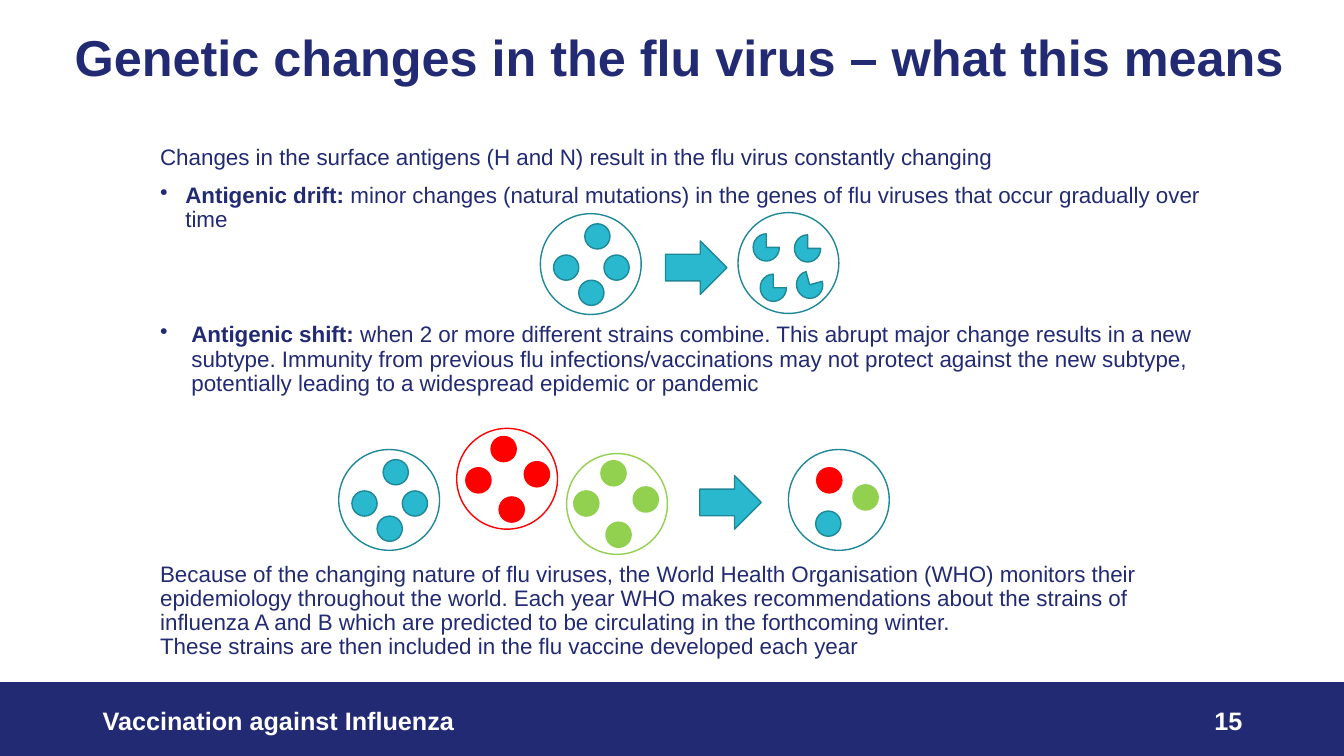
from lxml.etree import SubElement
from pptx import Presentation
from pptx.dml.color import RGBColor
from pptx.enum.shapes import MSO_SHAPE
from pptx.enum.text import MSO_ANCHOR, MSO_AUTO_SIZE, PP_ALIGN
from pptx.oxml.ns import qn
from pptx.util import Inches, Pt

COLORS = {"navy": "212A73", "white": "FFFFFF", "blue": "29B8CE",
          "teal": "1E8898", "red": "FF0000", "green": "92D050"}
# Strain name -> (fill, line)
STRAINS = {"blue": ("blue", "teal"), "red": ("red", "red"), "green": ("green", "green")}

CELL = 1.0
ANTIGEN = (0.25, 0.25)
MUTANT = (0.26, 0.27)
ARROW = (0.61, 0.53)
BLUE_SPOTS = [(0.13, 0.41), (0.38, 0.66), (0.63, 0.41), (0.44, 0.1)]
RED_SPOTS = [(0.09, 0.39), (0.42, 0.68), (0.67, 0.33), (0.34, 0.08)]
GREEN_SPOTS = [(0.07, 0.37), (0.39, 0.68), (0.66, 0.33), (0.34, 0.07)]

# Text runs (text, bold), hanging indent in inches, space before in points
BODY = [
    ([("Changes in the surface antigens (H and N) result in the flu virus "
       "constantly changing", False)], 0, 0),
    ([("Antigenic drift: ", True),
      ("minor changes (natural mutations) in the genes of flu viruses that occur "
       "gradually over time", False)], 0.25, 10),
    ([("Antigenic shift: ", True),
      ("when 2 or more different strains combine. This abrupt major change results "
       "in a new subtype. Immunity from previous flu infections/vaccinations may not "
       "protect against the new subtype, potentially leading to a widespread epidemic "
       "or pandemic", False)], 0.31, 65),
    ([("Because of the changing nature of flu viruses, the World Health Organisation "
       "(WHO) monitors their epidemiology throughout the world. Each year WHO makes "
       "recommendations about the strains of influenza A and B which are predicted to "
       "be circulating in the forthcoming winter. \n"
       "These strains are then included in the flu vaccine developed each year",
       False)], 0, 119),
]


def rgb(name):
    return RGBColor.from_string(COLORS[name])


def format_font(font, size, color, bold=False):
    values = {"name": "Arial", "size": Pt(size), "bold": bold}
    for key, value in values.items():
        setattr(font, key, value)
    font.color.rgb = rgb(color)


def add_runs(p, runs, size, color):
    for text, bold in runs:
        for i, line in enumerate(text.split("\n")):
            if i:
                p.add_line_break()
            r = p.add_run()
            r.text = line
            format_font(r.font, size, color, bold)


def add_bullet(p, indent):
    pPr = p._p.get_or_add_pPr()
    pPr.set("marL", str(Inches(indent)))
    pPr.set("indent", str(-Inches(indent)))
    SubElement(pPr, qn("a:buChar")).set("char", "•")


def add_part(shapes, kind, x, y, w, h, fill, line):
    sp = shapes.add_shape(kind, Inches(x), Inches(y), Inches(w), Inches(h))
    sp.shadow.inherit = False
    if fill:
        sp.fill.solid()
        sp.fill.fore_color.rgb = rgb(fill)
    else:
        sp.fill.background()
    sp.line.color.rgb = rgb(line)
    sp.line.width = Pt(1)
    return sp


def add_cell(s, x, y, outline, antigens):
    """Virus cell; antigens are (dx, dy, strain) from its top left corner."""
    shapes = s.shapes.add_group_shape().shapes
    add_part(shapes, MSO_SHAPE.OVAL, x, y, CELL, CELL, None, outline)
    for dx, dy, strain in antigens:
        add_part(shapes, MSO_SHAPE.FLOWCHART_CONNECTOR, x + dx, y + dy,
                 *ANTIGEN, *STRAINS[strain])


def add_strain(s, x, y, strain, spots):
    add_cell(s, x, y, STRAINS[strain][1], [(dx, dy, strain) for dx, dy in spots])


def add_arrow(s, x, y):
    add_part(s.shapes, MSO_SHAPE.RIGHT_ARROW, x, y, *ARROW, *STRAINS["blue"])


def add_title(s, x, y, w, h):
    sp = s.shapes.title
    sp.left, sp.top, sp.width, sp.height = map(Inches, (x, y, w, h))
    tf = sp.text_frame
    tf.auto_size = MSO_AUTO_SIZE.NONE
    tf.vertical_anchor = MSO_ANCHOR.MIDDLE
    p = tf.paragraphs[0]
    p.alignment = PP_ALIGN.LEFT
    p.line_spacing = 0.9
    add_runs(p, [("Genetic changes in the flu virus – what this means", True)], 36, "navy")


def add_body(s, x, y, w, h):
    tf = s.shapes.add_textbox(*map(Inches, (x, y, w, h))).text_frame
    tf.word_wrap = True
    for i, (runs, indent, before) in enumerate(BODY):
        p = tf.add_paragraph() if i else tf.paragraphs[0]
        if indent:
            add_bullet(p, indent)
        p.line_spacing = 0.9
        if before:
            p.space_before = Pt(before)
        add_runs(p, runs, 16, "navy")


def add_drift(s, x, y):
    add_strain(s, x, y + 0.01, "blue", BLUE_SPOTS)
    add_arrow(s, x + 1.24, y + 0.28)
    # Mutated cell with notched antigens
    x += 1.96
    add_cell(s, x, y, "teal", [])
    for dx, dy, turn in [(0.15, 0.21, 0), (0.22, 0.61, 0),
                         (0.56, 0.22, 0), (0.58, 0.58, -15.2)]:
        sp = add_part(s.shapes, MSO_SHAPE.PIE, x + dx, y + dy, *MUTANT, *STRAINS["blue"])
        sp.rotation = turn


def add_shift(s, x, y):
    add_strain(s, x, y + 0.21, "blue", BLUE_SPOTS)
    add_strain(s, x + 1.17, y, "red", RED_SPOTS)
    add_strain(s, x + 2.26, y + 0.25, "green", GREEN_SPOTS)
    add_arrow(s, x + 3.58, y + 0.47)
    # New subtype mixes all three strains
    add_cell(s, x + 4.46, y + 0.21, "teal",
             [(0.28, 0.18, "red"), (0.27, 0.61, "blue"), (0.64, 0.35, "green")])


def add_footer(s, x, y, w, h):
    add_part(s.shapes, MSO_SHAPE.RECTANGLE, x, y, w, h, "navy", "navy")
    for text, dx, width, align in [("Vaccination against Influenza", 0.92, 8, PP_ALIGN.LEFT),
                                   ("15", 9.42, 3, PP_ALIGN.RIGHT)]:
        box = s.shapes.add_textbox(Inches(x + dx), Inches(y + 0.18), Inches(width), Inches(0.4))
        tf = box.text_frame
        tf.word_wrap = True
        tf.vertical_anchor = MSO_ANCHOR.MIDDLE
        p = tf.paragraphs[0]
        p.alignment = align
        add_runs(p, [(text, True)], 18, "white")


def main():
    prs = Presentation()
    prs.slide_width, prs.slide_height = Inches(13.33), Inches(7.5)
    s = prs.slides.add_slide(prs.slide_layouts[5])
    add_footer(s, 0, 6.77, 13.33, 0.73)
    add_title(s, 0.64, 0.28, 12.6, 0.63)
    add_body(s, 1.49, 1.4, 10.63, 5.32)
    add_drift(s, 5.36, 2.11)
    add_shift(s, 3.36, 4.25)
    prs.save("out.pptx")


if __name__ == "__main__":
    main()
